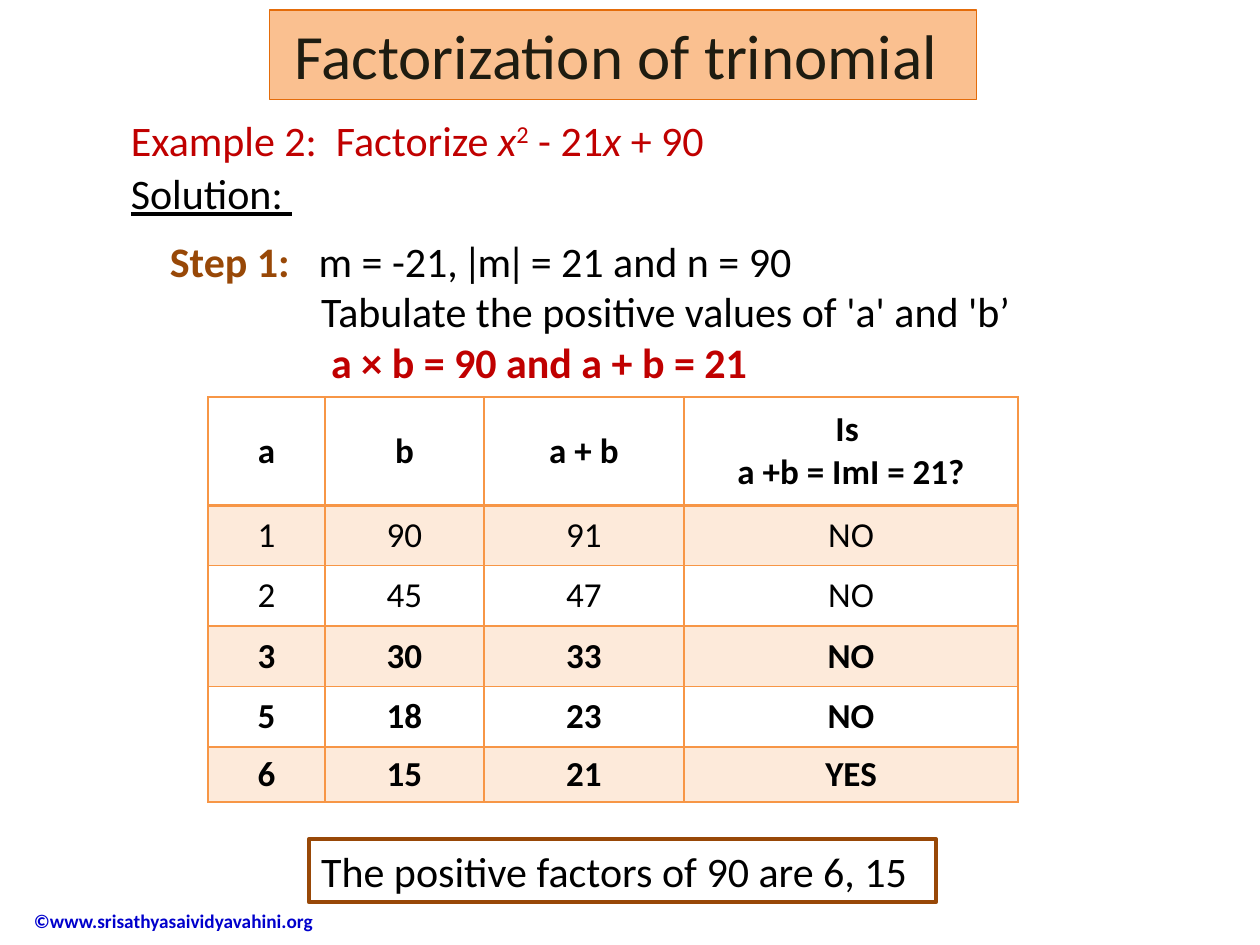
"""Build the slide that factorizes a trinomial with a table of factor pairs."""
from lxml.etree import SubElement
from pptx import Presentation
from pptx.dml.color import RGBColor
from pptx.enum.shapes import MSO_SHAPE
from pptx.enum.text import MSO_ANCHOR, MSO_AUTO_SIZE, PP_ALIGN
from pptx.oxml import parse_xml
from pptx.oxml.ns import nsdecls, qn
from pptx.util import Inches, Pt

BLACK = RGBColor(0x00, 0x00, 0x00)
RED = RGBColor(0xC0, 0x00, 0x00)
BROWN = RGBColor(0x98, 0x48, 0x07)
BLUE = RGBColor(0x00, 0x00, 0xCC)
TITLE_INK = RGBColor(0x1E, 0x1C, 0x11)
TITLE_FILL = RGBColor(0xFA, 0xC0, 0x90)
TITLE_LINE = RGBColor(0xE4, 0x6C, 0x0A)
GRID = RGBColor(0xF7, 0x96, 0x46)
BAND = RGBColor(0xFD, 0xEA, 0xDA)


def add_span(paragraph, text, size=24, color=BLACK, bold=False, italic=False):
    span = paragraph.add_run()
    span.text = text
    span.font.name = "Calibri"
    span.font.size = Pt(size)
    span.font.color.rgb = color
    span.font.bold = bold
    span.font.italic = italic
    return span


def add_box(page, left, top, width, height, wrap=False):
    box = page.shapes.add_textbox(Inches(left), Inches(top), Inches(width), Inches(height))
    box.text_frame.word_wrap = wrap
    return box


deck = Presentation()
deck.slide_width = Inches(10)
deck.slide_height = Inches(7.5)
page = deck.slides.add_slide(deck.slide_layouts[5])

footer = add_box(page, 0.17, 7.1, 2.52, 0.41)
footer.text_frame.vertical_anchor = MSO_ANCHOR.MIDDLE
add_span(footer.text_frame.paragraphs[0], "©www.srisathyasaividyavahini.org", 11, BLUE, bold=True)

example = add_box(page, 0.94, 0.86, 4.87, 0.5).text_frame.paragraphs[0]
add_span(example, "Example 2:  Factorize ", color=RED)
add_span(example, "x", color=RED, italic=True)
exponent = add_span(example, "2", color=RED)
exponent.font._element.set("baseline", "30000")
add_span(example, " - 21", color=RED)
add_span(example, "x ", color=RED, italic=True)
add_span(example, "+ 90", color=RED)

solution = add_box(page, 0.94, 1.28, 1.53, 0.5).text_frame.paragraphs[0]
add_span(solution, "Solution: ").font.underline = True

step_frame = add_box(page, 1.25, 1.82, 7.22, 1.33, wrap=True).text_frame
step = step_frame.paragraphs[0]
tab_list = SubElement(step._p.get_or_add_pPr(), qn("a:tabLst"))
SubElement(tab_list, qn("a:tab"), pos=str(Inches(1.18)), algn="l")
add_span(step, "Step 1:\t", color=BROWN, bold=True)
add_span(step, "m = -21, ǀmǀ = 21 and n = 90")
for text, indent, color, bold in (
    ("Tabulate the positive values of 'a' and 'b’", 1.2, BLACK, False),
    ("a × b = 90 and a + b = 21", 1.28, RED, True),
):
    paragraph = step_frame.add_paragraph()
    paragraph._p.get_or_add_pPr().set("marL", str(Inches(indent)))
    add_span(paragraph, text, color=color, bold=bold)

rows = (
    ("a", "b", "a + b", "Is \na +b = ImI = 21?"),
    ("1", "90", "91", "NO"),
    ("2", "45", "47", "NO"),
    ("3", "30", "33", "NO"),
    ("5", "18", "23", "NO"),
    ("6", "15", "21", "YES"),
)
column_widths = (0.93, 1.26, 1.59, 2.65)
row_heights = (0.86, 0.48, 0.48, 0.48, 0.48, 0.43)
table = page.shapes.add_table(
    len(rows), len(column_widths), Inches(1.65), Inches(3.15),
    Inches(sum(column_widths)), Inches(sum(row_heights)),
).table
table.first_row = False
table.horz_banding = False
for column, width in zip(table.columns, column_widths):
    column.width = Inches(width)
for row, height in zip(table.rows, row_heights):
    row.height = Inches(height)

for row_index, values in enumerate(rows):
    for column_index, value in enumerate(values):
        cell = table.cell(row_index, column_index)
        cell.vertical_anchor = MSO_ANCHOR.MIDDLE
        if row_index % 2:
            cell.fill.solid()
            cell.fill.fore_color.rgb = BAND
        else:
            cell.fill.background()
        for line_index, line in enumerate(value.split("\n")):
            frame = cell.text_frame
            paragraph = frame.add_paragraph() if line_index else frame.paragraphs[0]
            paragraph.alignment = PP_ALIGN.CENTER
            add_span(paragraph, line, 20, bold=row_index not in (1, 2))
        properties = cell._tc.get_or_add_tcPr()
        for position, side in enumerate(("lnL", "lnR", "lnT", "lnB")):
            under_header = (row_index, side) in ((0, "lnB"), (1, "lnT"))
            properties.insert(position, parse_xml(
                f'<a:{side} {nsdecls("a")} w="{Pt(2 if under_header else 1)}">'
                f'<a:solidFill><a:srgbClr val="{GRID}"/></a:solidFill></a:{side}>'
            ))

answer = page.shapes.add_shape(
    MSO_SHAPE.RECTANGLE, Inches(2.45), Inches(6.66), Inches(4.98), Inches(0.5)
)
answer.shadow.inherit = False
answer.fill.background()
answer.line.color.rgb = BROWN
answer.line.width = Pt(2.25)
answer.text_frame.word_wrap = False
answer.text_frame.vertical_anchor = MSO_ANCHOR.TOP
conclusion = answer.text_frame.paragraphs[0]
conclusion.alignment = PP_ALIGN.LEFT
add_span(conclusion, "The positive factors of 90 are 6, 15")

title = page.shapes.title
title.left, title.top = Inches(2.14), Inches(0.08)
title.width, title.height = Inches(5.61), Inches(0.71)
title.fill.solid()
title.fill.fore_color.rgb = TITLE_FILL
title.line.color.rgb = TITLE_LINE
title.line.width = Pt(0.75)
title.text_frame.word_wrap = False
title.text_frame.auto_size = MSO_AUTO_SIZE.NONE
heading = title.text_frame.paragraphs[0]
heading.alignment = PP_ALIGN.CENTER
add_span(heading, "Factorization of trinomial ", 36, TITLE_INK)

deck.save("out.pptx")
